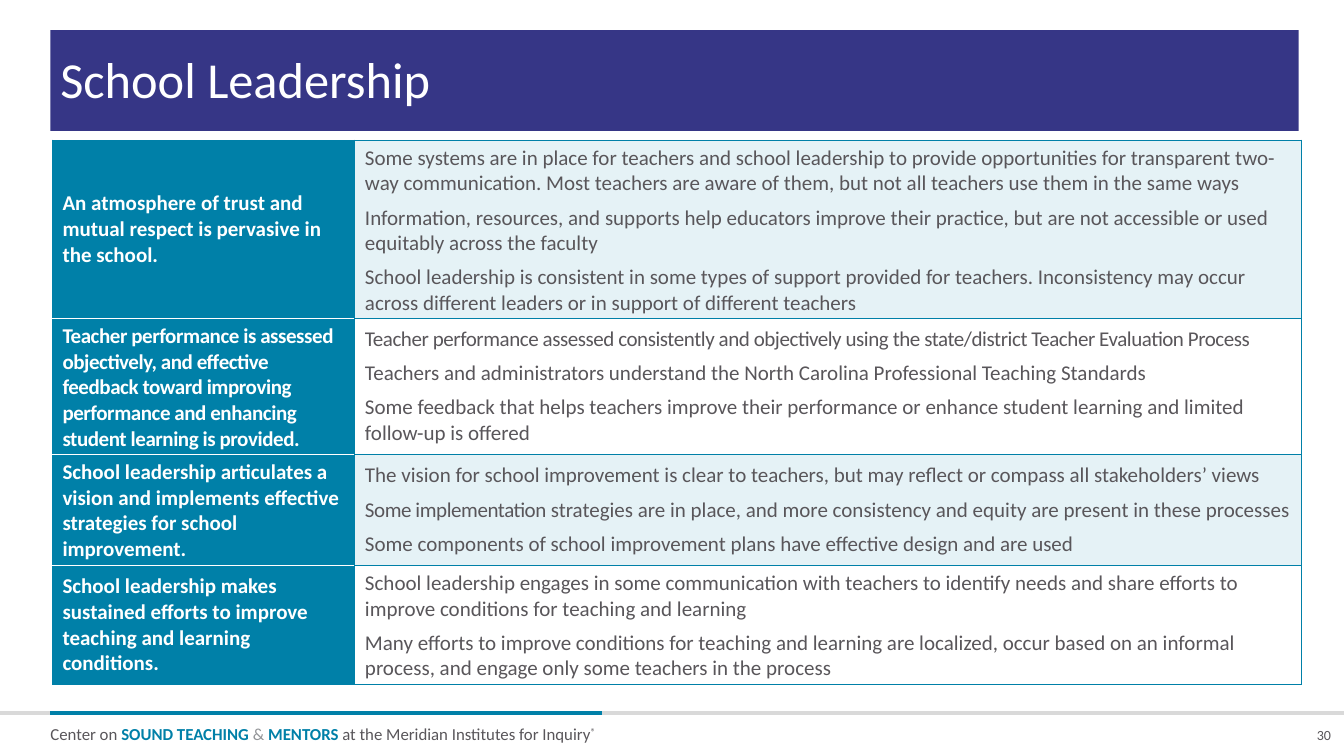
from dataclasses import dataclass

from lxml import etree
from pptx import Presentation
from pptx.dml.color import RGBColor
from pptx.enum import shapes, text
from pptx.oxml import ns
from pptx.util import Inches, Pt


@dataclass(frozen=True)
class Theme:
    font: str = "Calibri"
    navy: str = "363686"
    teal: str = "0080A8"
    pale: str = "E5F2F6"
    white: str = "FFFFFF"
    ink: str = "59565A"
    gray: str = "939598"
    rule: str = "D9D9D9"
    title: int = 36
    body: int = 15
    foot: int = 12
    page: int = 10


T = Theme()
TIGHT = -30  # letter spacing in hundredths of a point
COLS = (3, 9.39)

# Height, heading, heading spacing, then paragraphs made of (text, spacing) runs
ROWS = [
    (1.73, "An atmosphere of trust and mutual respect is pervasive in the school.", 0, [
        [("Some systems are in place for teachers and school leadership to provide "
          "opportunities for transparent two-way communication. Most teachers are aware "
          "of them, but not all teachers use them in the same ways", 0)],
        [("Information, resources, and supports help educators improve their practice, "
          "but are not accessible or used equitably across the faculty", 0)],
        [("School leadership is consistent in some types of support provided for "
          "teachers. Inconsistency may occur across different leaders or in support of "
          "different teachers", 0)],
    ]),
    (1.32, "Teacher performance is assessed objectively, and effective feedback toward "
           "improving performance and enhancing student learning is provided.", TIGHT, [
        [("Teacher performance assessed consistently and objectively using the "
          "state/district Teacher Evaluation Process", TIGHT)],
        [("Teachers and administrators understand the North Carolina Professional "
          "Teaching Standards", 0)],
        [("Some feedback that helps teachers improve their performance or enhance "
          "student learning and limited follow-up is offered", 0)],
    ]),
    (1.08, "School leadership articulates a vision and implements effective strategies "
           "for school improvement.", 0, [
        [("The vision for school improvement is clear to teachers, but may reflect or "
          "compass all stakeholders’ views", 0)],
        [("Some implementation ", TIGHT),
         ("strategies are in place, and more consistency and equity are present in "
          "these processes", 0)],
        [("Some components of school improvement plans have effective design and are "
          "used", 0)],
    ]),
    (1.16, "School leadership makes sustained efforts to improve teaching and learning "
           "conditions.", 0, [
        [("School leadership engages in some communication with teachers to identify "
          "needs and share efforts to improve conditions for teaching and learning", 0)],
        [("Many efforts to improve conditions for teaching and learning are localized, "
          "occur based on an informal process, and engage only some teachers in the "
          "process", 0)],
    ]),
]


def rgb(color):
    return RGBColor.from_string(color)


def add_run(para, words, size, color, bold=False, **attrs):
    """Add a run; attrs are extra run properties such as spc or baseline."""
    run = para.add_run()
    run.text = words
    font = run.font
    font.name, font.size, font.bold = T.font, Pt(size), bold
    font.color.rgb = rgb(color)
    for key, value in attrs.items():
        run._r.get_or_add_rPr().set(key, str(value))


def add_text(slide, box, anchor, left=0, wrap=True):
    """Add an empty text box and return its first paragraph."""
    frame = slide.shapes.add_textbox(*map(Inches, box)).text_frame
    frame.margin_left = Inches(left)
    frame.margin_top = frame.margin_right = frame.margin_bottom = 0
    frame.word_wrap = wrap
    frame.vertical_anchor = anchor
    return frame.paragraphs[0]


def add_band(slide, box, color):
    band = slide.shapes.add_shape(shapes.MSO_SHAPE.RECTANGLE, *map(Inches, box))
    band.shadow.inherit = False
    band.fill.solid()
    band.fill.fore_color.rgb = rgb(color)
    band.line.fill.background()


def add_rule(slide, start, end, top, color):
    rule = slide.shapes.add_connector(
        shapes.MSO_CONNECTOR.STRAIGHT, Inches(start), Inches(top), Inches(end), Inches(top))
    rule.line.color.rgb = rgb(color)
    rule.line.width = Pt(3)
    etree.SubElement(rule._element.spPr, ns.qn("a:effectLst"))


def style_cell(cell, fill, top, bottom):
    """Set fill and borders; the side borders are always teal."""
    cell.vertical_anchor = text.MSO_ANCHOR.MIDDLE
    props = cell._tc.get_or_add_tcPr()
    sides = {"lnL": T.teal, "lnR": T.teal, "lnT": top, "lnB": bottom}
    for side, color in sides.items():
        line = etree.SubElement(props, ns.qn(f"a:{side}"), w=str(Pt(0.75)))
        solid = etree.SubElement(line, ns.qn("a:solidFill"))
        etree.SubElement(solid, ns.qn("a:srgbClr"), val=color)
    cell.fill.solid()
    cell.fill.fore_color.rgb = rgb(fill)


def fill_cell(cell, paras, color, bold=False):
    frame = cell.text_frame
    for i, runs in enumerate(paras):
        para = frame.add_paragraph() if i else frame.paragraphs[0]
        para.space_after = Pt(6)
        for words, gap in runs:
            add_run(para, words, T.body, color, bold, spc=gap)


def add_grid(slide):
    high = sum(row[0] for row in ROWS)
    grid = slide.shapes.add_table(
        len(ROWS), len(COLS), Inches(0.52), Inches(1.39), Inches(sum(COLS)), Inches(high)).table
    grid.first_row = grid.horz_banding = False
    for col, wide in zip(grid.columns, COLS):
        col.width = Inches(wide)
    last = len(ROWS) - 1
    for i, (tall, head, gap, paras) in enumerate(ROWS):
        grid.rows[i].height = Inches(tall)
        label, detail = grid.cell(i, 0), grid.cell(i, 1)
        style_cell(label, T.teal, T.white if i else T.teal, T.white if i < last else T.teal)
        fill_cell(label, [[(head, gap)]], T.white, True)
        style_cell(detail, T.white if i % 2 else T.pale, T.teal, T.teal)
        fill_cell(detail, paras, T.ink)


def add_footer(slide):
    add_rule(slide, 0, 13.33, 7.07, T.rule)
    add_rule(slide, 0.5, 5.97, 7.07, T.teal)
    para = add_text(slide, (0.5, 7.13, 5.47, 0.23), text.MSO_ANCHOR.TOP, wrap=False)
    para.line_spacing = 1.25
    add_run(para, "Center on ", T.foot, T.ink)
    add_run(para, "SOUND TEACHING ", T.foot, T.teal, True)
    add_run(para, "& ", T.foot, T.gray)
    add_run(para, "MENTORS", T.foot, T.teal, True)
    add_run(para, " at the Meridian Institutes for Inquiry", T.foot, T.ink)
    add_run(para, "®", T.foot, T.ink, baseline=30000)
    page = add_text(slide, (13.03, 7.2, 0.17, 0.17), text.MSO_ANCHOR.BOTTOM)
    page.alignment = text.PP_ALIGN.RIGHT
    add_run(page, "30", T.page, T.ink)


def main():
    deck = Presentation()
    deck.slide_width, deck.slide_height = Inches(13.33), Inches(7.5)
    slide = deck.slides.add_slide(deck.slide_layouts[6])
    add_footer(slide)
    add_band(slide, (0.5, 0.3, 12.38, 1), T.navy)
    title = add_text(slide, (0.5, 0, 12.4, 1.09), text.MSO_ANCHOR.BOTTOM, left=0.1)
    title.line_spacing = 0.9
    add_run(title, "School Leadership", T.title, T.white)
    add_grid(slide)
    deck.save("out.pptx")


if __name__ == "__main__":
    main()
